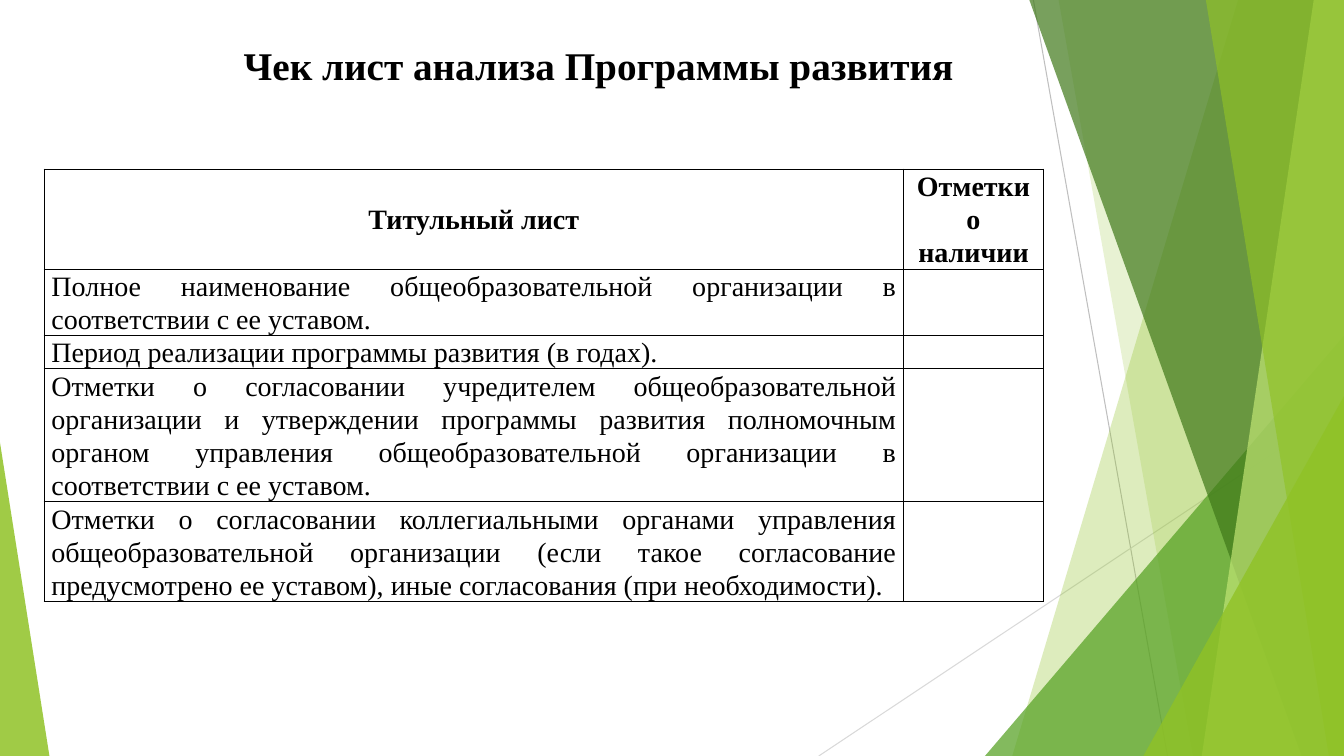
from dataclasses import dataclass

from lxml.etree import SubElement
from pptx import Presentation
from pptx.dml.color import RGBColor
from pptx.enum.shapes import MSO_CONNECTOR, MSO_SHAPE
from pptx.enum.text import MSO_ANCHOR as ANCHOR, PP_ALIGN as ALIGN
from pptx.oxml.ns import qn
from pptx.util import Inches, Pt

WIDTH, HEIGHT = Inches(13.33), Inches(7.5)
FONT = "Times New Roman"
BLACK = "000000"
GREEN = "90C226"
ROW_LINE = 4.4


@dataclass
class Ray:
    x1: float
    y1: float
    x2: float
    y2: float
    color: str


@dataclass
class Band:
    top_x: float
    bottom_x: float
    color: str
    opacity: int


@dataclass
class Corner:
    left: float
    top: float
    width: float
    apex: float
    color: str
    opacity: int


@dataclass
class Row:
    item: str
    mark: str
    lines: int


RAYS = [Ray(76.89, 0, 86.87, 100, "BFBFBF"), Ray(100, 53.73, 60.92, 100, "D9D9D9")]
FACETS = [
    Band(92.12, 75.32, GREEN, 30),
    Band(78.77, 88.75, GREEN, 20),
    Corner(73.29, 44.4, 26.71, 1, "54A021", 72),
    Band(76.59, 96.85, "3F7819", 70),
    Band(97.75, 89.42, "C0E474", 70),
    Band(89.72, 98.87, GREEN, 65),
    Corner(85.07, 52.4, 14.93, 1, GREEN, 80),
    Corner(0, 58.53, 3.68, 0, GREEN, 85),
]
COLUMNS = [63.92, 10.43]
ROWS = [
    Row("Титульный лист", "Отметки о наличии", 3),
    Row("Полное наименование общеобразовательной организации в соответствии с ее уставом.", "", 2),
    Row("Период реализации программы развития (в годах).", "", 1),
    Row("Отметки о согласовании учредителем общеобразовательной организации и утверждении "
        "программы развития полномочным органом управления общеобразовательной организации "
        "в соответствии с ее уставом.", "", 4),
    Row("Отметки о согласовании коллегиальными органами управления общеобразовательной "
        "организации (если такое согласование предусмотрено ее уставом), иные согласования "
        "(при необходимости).", "", 3),
]


def x(share: float) -> int:
    return round(WIDTH * share / 100)


def y(share: float) -> int:
    return round(HEIGHT * share / 100)


def rgb(color: str) -> RGBColor:
    return RGBColor.from_string(color)


def style_text(p, size: int, bold: bool) -> None:
    for r in p.runs:
        r.font.name, r.font.size, r.font.bold = FONT, Pt(size), bold
        r.font.color.rgb = rgb(BLACK)


def draw_ray(shapes, ray: Ray) -> None:
    c = shapes.add_connector(MSO_CONNECTOR.STRAIGHT, x(ray.x1), y(ray.y1), x(ray.x2), y(ray.y2))
    c.line.color.rgb = rgb(ray.color)
    c.line.width = Pt(0.75)
    SubElement(c._element.spPr, qn("a:effectLst"))


def draw_facet(shapes, facet: Band | Corner) -> None:
    if isinstance(facet, Band):
        builder = shapes.build_freeform(x(facet.top_x), 0)
        builder.add_line_segments([(WIDTH, 0), (WIDTH, HEIGHT), (x(facet.bottom_x), HEIGHT)])
        sp = builder.convert_to_shape()
    else:
        sp = shapes.add_shape(MSO_SHAPE.ISOSCELES_TRIANGLE, x(facet.left), y(facet.top),
                              x(facet.width), y(100 - facet.top))
        sp.adjustments[0] = facet.apex
    sp.shadow.inherit = False
    sp.line.fill.background()
    sp.fill.solid()
    sp.fill.fore_color.rgb = rgb(facet.color)
    color = sp._element.spPr.find(qn("a:solidFill"))[0]
    SubElement(color, qn("a:alpha"), val=str(facet.opacity * 1000))


def draw_cell(cell, text: str, header: bool, align: ALIGN) -> None:
    tc_pr = cell._tc.get_or_add_tcPr()
    for side in ("lnL", "lnR", "lnT", "lnB"):
        ln = SubElement(tc_pr, qn(f"a:{side}"), w=str(Pt(1)))
        SubElement(SubElement(ln, qn("a:solidFill")), qn("a:srgbClr"), val=BLACK)
    cell.fill.background()
    cell.margin_left = cell.margin_right = Inches(0.07)
    cell.margin_top = cell.margin_bottom = 0
    p = cell.text_frame.paragraphs[0]
    p.text = text
    p.alignment = align
    if text:
        p.line_spacing = 1.07
        p.space_after = Pt(8)
    style_text(p, 20, header)


def draw_checklist(shapes) -> None:
    table = shapes.add_table(len(ROWS), len(COLUMNS), x(3.3), y(22.4), x(sum(COLUMNS)),
                             y(ROW_LINE * sum(row.lines for row in ROWS))).table
    table.first_row = table.horz_banding = False
    for column, share in zip(table.columns, COLUMNS):
        column.width = x(share)
    for i, row in enumerate(ROWS):
        table.rows[i].height = y(ROW_LINE * row.lines)
        align = ALIGN.JUSTIFY if i else ALIGN.CENTER
        for j, text in enumerate((row.item, row.mark)):
            draw_cell(table.cell(i, j), text, i == 0, align)
    table.cell(0, 0).vertical_anchor = ANCHOR.MIDDLE


def draw_title(shapes) -> None:
    tf = shapes.add_textbox(x(17.4), y(4.67), x(56.56), y(11.73)).text_frame
    tf.word_wrap = True
    tf.vertical_anchor = ANCHOR.MIDDLE
    tf.margin_bottom = Inches(0.34)
    p = tf.paragraphs[0]
    p.text = "Чек лист анализа Программы развития"
    style_text(p, 28, True)


def main() -> None:
    """Build the checklist slide and save it."""
    prs = Presentation()
    prs.slide_width, prs.slide_height = WIDTH, HEIGHT
    shapes = prs.slides.add_slide(prs.slide_layouts[6]).shapes
    for ray in RAYS:
        draw_ray(shapes, ray)
    for facet in FACETS:
        draw_facet(shapes, facet)
    draw_checklist(shapes)
    draw_title(shapes)
    prs.save("out.pptx")


if __name__ == "__main__":
    main()
